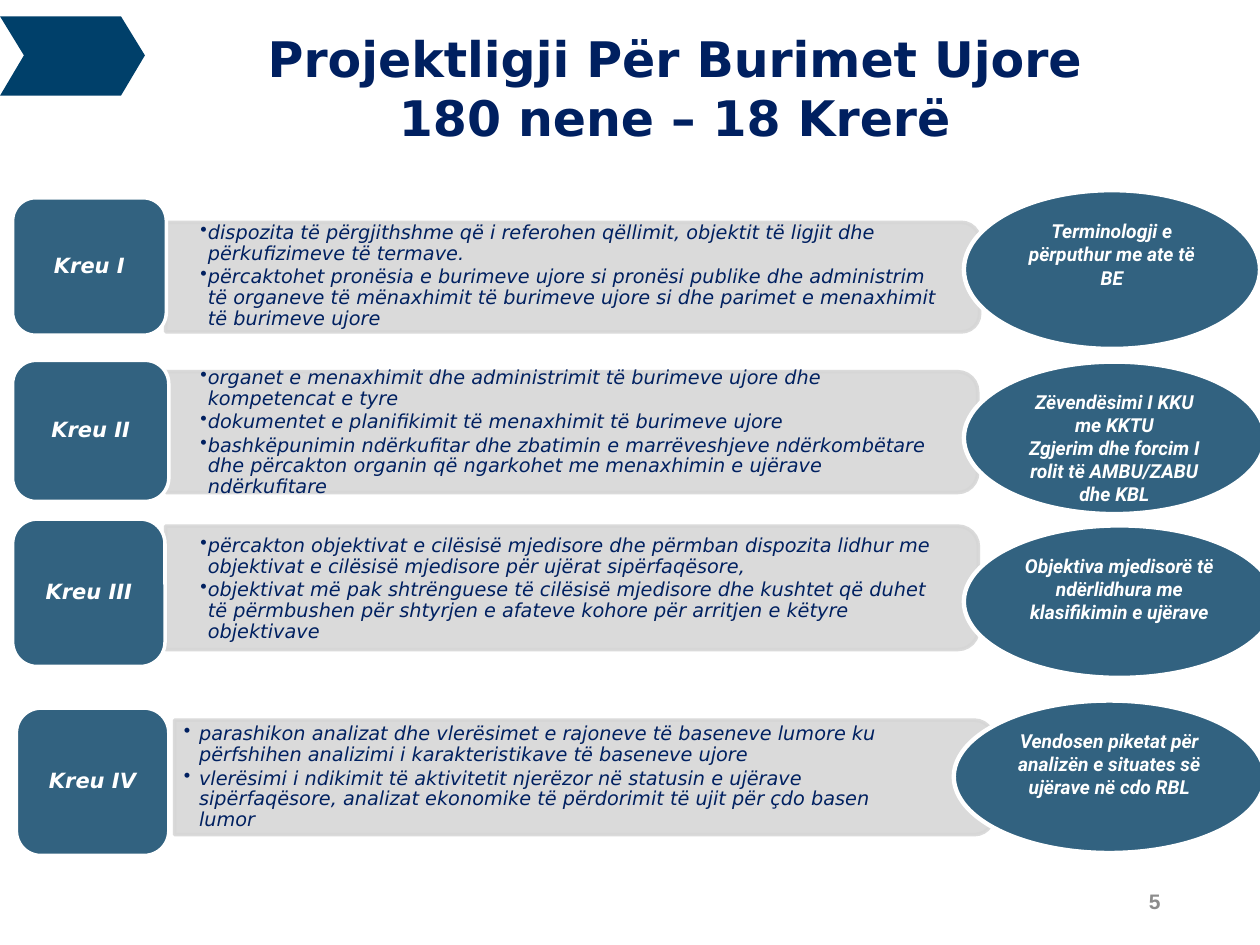
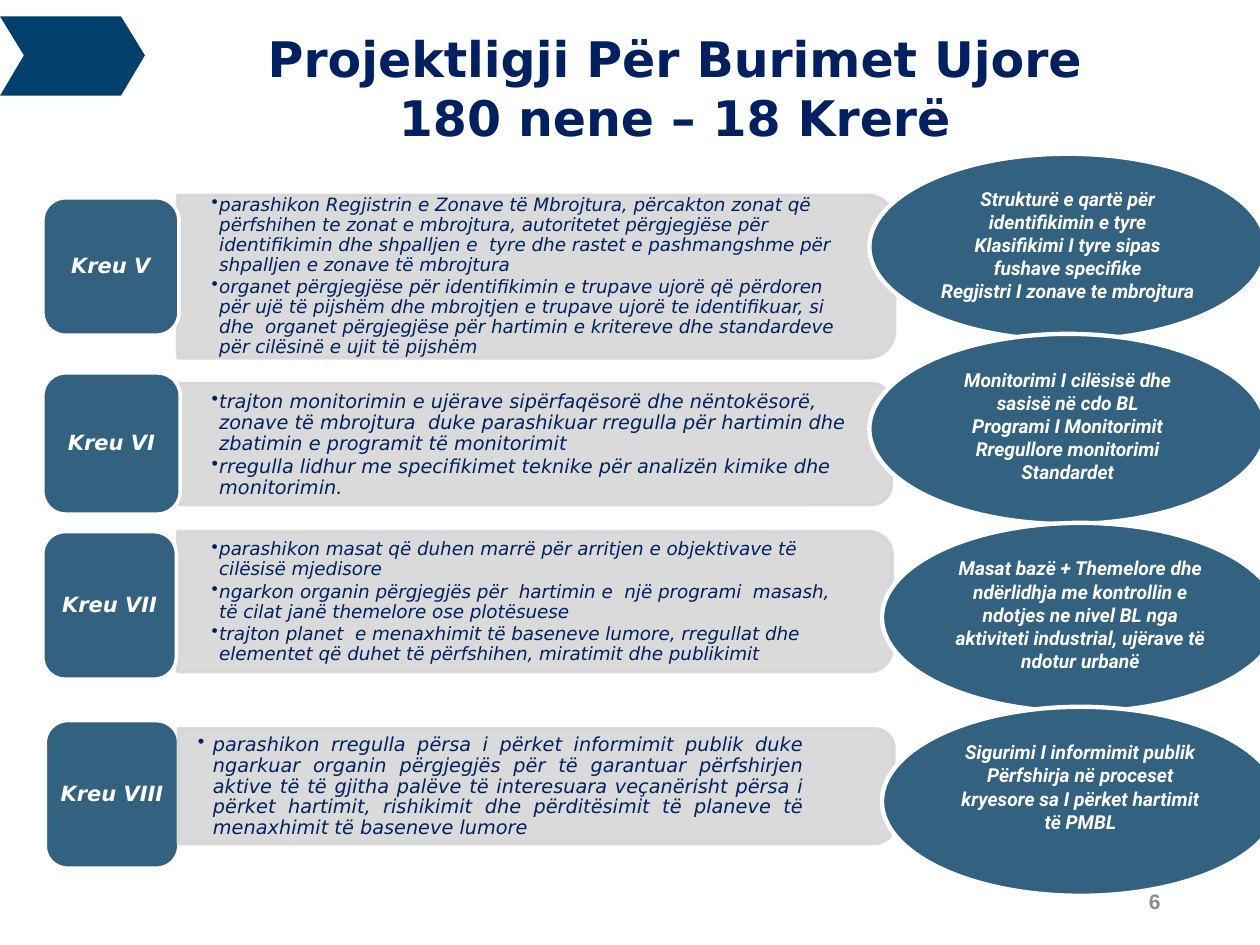
from dataclasses import dataclass

from lxml import etree
from pptx import Presentation, util as u
from pptx.dml.color import RGBColor
from pptx.enum import shapes, text
from pptx.oxml import ns

PX = 9144
Align = text.PP_ALIGN
Anchor = text.MSO_ANCHOR
Preset = shapes.MSO_SHAPE


@dataclass(frozen=True)
class Theme:
    navy: str = "002060"
    arrow: str = "00406A"
    teal: str = "326280"
    bar: str = "D6D6D6"
    white: str = "FFFFFF"
    page_gray: str = "8C8C8C"
    body_font: str = "DejaVu Sans"
    oval_font: str = "Roboto"
    page_font: str = "Arial"
    title_size: float = 28
    label_size: float = 12
    body_size: float = 11
    dense_size: float = 10.5
    bar_opacity: int = 90


@dataclass(frozen=True)
class Chapter:
    label: str
    badge: tuple
    bar: tuple
    note: tuple
    points: list
    oval: tuple
    remarks: list
    size: float = Theme.body_size
    hanging: int = 6
    align: Align = Align.LEFT
    bar_in_front: bool = False


def px(*lengths):
    return [u.Emu(length * PX) for length in lengths]


def write(frame, lines, size, font, color, bold=False, italic=False, align=Align.CENTER,
          anchor=Anchor.TOP, insets=(10, 5, 10, 5), spacing=None, after=None,
          indent=0, bullet=None):
    frame.word_wrap = True
    frame.auto_size = text.MSO_AUTO_SIZE.NONE
    frame.vertical_anchor = anchor
    frame.margin_left, frame.margin_top, frame.margin_right, frame.margin_bottom = px(*insets)
    for index, line in enumerate(lines):
        paragraph = frame.add_paragraph() if index else frame.paragraphs[0]
        paragraph.alignment = align
        paragraph.line_spacing = spacing
        paragraph.space_after = after
        run = paragraph.add_run()
        run.text = line
        run.font.name, run.font.size = font, u.Pt(size)
        run.font.bold, run.font.italic = bold, italic
        run.font.color.rgb = RGBColor.from_string(color)
        properties = paragraph._p.get_or_add_pPr()
        if indent:
            properties.set("marL", str(indent * PX))
        if bullet:
            properties.set("indent", str(-indent * PX))
            etree.SubElement(properties, ns.qn("a:buChar"), char=bullet)


class Deck:
    def __init__(self, theme):
        self.theme = theme
        self.presentation = Presentation()
        self.presentation.slide_width, self.presentation.slide_height = px(1000, 750)
        self.slide = None

    def paint(self, shape, fill, line=None, width=2, opacity=100):
        shape.shadow.inherit = False
        shape.fill.solid()
        shape.fill.fore_color.rgb = RGBColor.from_string(fill)
        if line:
            shape.line.color.rgb = RGBColor.from_string(line)
            shape.line.width = u.Pt(width)
        else:
            shape.line.fill.background()
        if opacity < 100:
            for color in shape._element.spPr.iter(ns.qn("a:srgbClr")):
                etree.SubElement(color, ns.qn("a:alpha"), val=str(opacity * 1000))

    def shape(self, preset, box, fill, line, **look):
        shape = self.slide.shapes.add_shape(preset, *px(*box))
        self.paint(shape, fill, line, **look)
        return shape

    def textbox(self, box, lines, **look):
        write(self.slide.shapes.add_textbox(*px(*box)).text_frame, lines, **look)

    def arrow(self):
        builder = self.slide.shapes.build_freeform(0, 13, scale=PX)
        builder.add_line_segments([(19, 44), (0, 76), (96, 76), (115, 44), (96, 13)], close=True)
        self.paint(builder.convert_to_shape(), self.theme.arrow)

    def bar(self, box):
        left, top, width, height = box
        shift = (width - height) / 2
        upright = (int(left + shift), int(top - shift), height, width)
        shape = self.shape(Preset.ROUND_2_SAME_RECTANGLE, upright, self.theme.bar,
                           self.theme.bar, opacity=self.theme.bar_opacity)
        shape.rotation = 90

    def note(self, chapter):
        self.textbox(chapter.note, chapter.points, size=chapter.size,
                     font=self.theme.body_font, color=self.theme.navy, italic=True,
                     align=chapter.align, anchor=Anchor.MIDDLE, insets=(27, 14, 27, 14),
                     spacing=0.9, after=u.Pt(1.5), indent=chapter.hanging, bullet="•")

    def badge(self, box, label):
        shape = self.shape(Preset.ROUNDED_RECTANGLE, box, self.theme.teal, self.theme.white)
        write(shape.text_frame, [label], size=self.theme.label_size,
              font=self.theme.body_font, color=self.theme.white, bold=True, italic=True,
              anchor=Anchor.MIDDLE, insets=(0, 3, 0, 3), spacing=0.9)

    def oval(self, box, remarks):
        shape = self.shape(Preset.OVAL, box, self.theme.teal, self.theme.white, width=2.5)
        write(shape.text_frame, remarks, size=self.theme.body_size,
              font=self.theme.oval_font, color=self.theme.white, bold=True, italic=True)

    def chapter(self, chapter):
        if not chapter.bar_in_front:
            self.bar(chapter.bar)
        self.badge(chapter.badge, chapter.label)
        if chapter.bar_in_front:
            self.bar(chapter.bar)
        self.note(chapter)
        self.oval(chapter.oval, chapter.remarks)

    def page(self, number, title, chapters):
        self.slide = self.presentation.slides.add_slide(self.presentation.slide_layouts[6])
        self.arrow()
        self.textbox((706, 695, 225, 40), [str(number)], size=self.theme.label_size,
                     font=self.theme.page_font, color=self.theme.page_gray, bold=True,
                     align=Align.RIGHT, anchor=Anchor.MIDDLE)
        self.textbox((67, 13, 906, 118), title, size=self.theme.title_size,
                     font=self.theme.body_font, color=self.theme.navy, bold=True,
                     insets=(10, 10, 10, 10), indent=31)
        for chapter in chapters:
            self.chapter(chapter)


TITLE = ["Projektligji Për Burimet Ujore", "180 nene – 18 Krerë"]

FIRST_CHAPTERS = [
    Chapter(
        "Kreu I", badge=(10, 157, 122, 109), bar=(132, 176, 646, 87), note=(132, 180, 642, 78),
        points=[
            "dispozita të përgjithshme që i referohen qëllimit, objektit të ligjit dhe përkufizimeve të termave.",
            "përcaktohet pronësia e burimeve ujore si pronësi publike dhe administrim të organeve të "
            "mënaxhimit të burimeve ujore si dhe parimet e menaxhimit të burimeve ujore",
        ],
        oval=(765, 151, 235, 126), remarks=["Terminologji e përputhur me ate të BE"]),
    Chapter(
        "Kreu II", badge=(10, 286, 124, 112), bar=(132, 295, 644, 96), note=(132, 300, 640, 87),
        points=[
            "organet e menaxhimit dhe administrimit të burimeve ujore dhe kompetencat e tyre",
            "dokumentet e planifikimit të menaxhimit të burimeve ujore",
            "bashkëpunimin ndërkufitar dhe zbatimin e marrëveshjeve ndërkombëtare dhe përcakton "
            "organin që ngarkohet me menaxhimin e ujërave ndërkufitare",
        ],
        oval=(765, 287, 239, 121),
        remarks=["Zëvendësimi I KKU me KKTU", "Zgjerim dhe forcim I rolit të AMBU/ZABU dhe KBL"]),
    Chapter(
        "Kreu III", badge=(10, 412, 121, 117), bar=(132, 418, 645, 98), note=(132, 423, 640, 89),
        points=[
            "përcakton objektivat e cilësisë mjedisore dhe përmban dispozita lidhur me objektivat e "
            "cilësisë mjedisore për ujërat sipërfaqësore,",
            "objektivat më pak shtrënguese të cilësisë mjedisore dhe kushtet që duhet të përmbushen "
            "për shtyrjen e afateve kohore për arritjen e këtyre objektivave",
        ],
        oval=(765, 417, 247, 121),
        remarks=["Objektiva mjedisorë të ndërlidhura me klasifikimin e ujërave"]),
    Chapter(
        "Kreu IV", badge=(13, 562, 121, 117), bar=(139, 572, 650, 91), note=(119, 576, 646, 82),
        points=[
            "parashikon analizat dhe vlerësimet e rajoneve të baseneve lumore ku përfshihen analizimi "
            "i karakteristikave të baseneve ujore",
            "vlerësimi i ndikimit të aktivitetit njerëzor në statusin e ujërave sipërfaqësore, "
            "analizat ekonomike të përdorimit të ujit për çdo basen lumor",
        ],
        oval=(757, 556, 247, 121),
        remarks=["Vendosen piketat për analizën e situates së ujërave në cdo RBL"],
        hanging=12, bar_in_front=True),
]

SECOND_CHAPTERS = [
    Chapter(
        "Kreu V", badge=(34, 157, 108, 109), bar=(141, 155, 569, 129), note=(141, 161, 562, 117),
        points=[
            "parashikon Regjistrin e Zonave të Mbrojtura, përcakton zonat që përfshihen te zonat e "
            "mbrojtura, autoritetet përgjegjëse për identifikimin dhe shpalljen e  tyre dhe rastet e "
            "pashmangshme për shpalljen e zonave të mbrojtura",
            "organet përgjegjëse për identifikimin e trupave ujorë që përdoren për ujë të pijshëm dhe "
            "mbrojtjen e trupave ujorë te identifikuar, si dhe  organet përgjegjëse për hartimin e "
            "kritereve dhe standardeve për cilësinë e ujit të pijshëm",
        ],
        oval=(690, 122, 315, 148),
        remarks=["Strukturë e qartë për identifikimin e tyre",
                 "Klasifikimi I tyre sipas fushave specifike", "Regjistri I zonave te mbrojtura"],
        size=Theme.dense_size),
    Chapter(
        "Kreu VI", badge=(34, 296, 109, 112), bar=(141, 305, 567, 96), note=(141, 310, 562, 87),
        points=[
            "trajton monitorimin e ujërave sipërfaqësorë dhe nëntokësorë, zonave të mbrojtura  duke "
            "parashikuar rregulla për hartimin dhe zbatimin e programit të monitorimit",
            "rregulla lidhur me specifikimet teknike për analizën kimike dhe monitorimin.",
        ],
        oval=(690, 265, 315, 151),
        remarks=["Monitorimi I cilësisë dhe sasisë në cdo BL", "Programi I Monitorimit",
                 "Rregullore monitorimi", "Standardet"]),
    Chapter(
        "Kreu VII", badge=(34, 422, 106, 117), bar=(141, 422, 567, 111), note=(141, 428, 562, 100),
        points=[
            "parashikon masat që duhen marrë për arritjen e objektivave të cilësisë mjedisore",
            "ngarkon organin përgjegjës për  hartimin e  një programi  masash, të cilat janë "
            "themelore ose plotësuese",
            "trajton planet  e menaxhimit të baseneve lumore, rregullat dhe elementet që duhet të "
            "përfshihen, miratimit dhe publikimit",
        ],
        oval=(700, 415, 315, 150),
        remarks=["Masat bazë + Themelore dhe ndërlidhja me kontrollin e ndotjes ne nivel BL nga "
                 "aktiviteti industrial, ujërave të ndotur urbanë"],
        size=Theme.dense_size),
    Chapter(
        "Kreu VIII", badge=(36, 572, 106, 117), bar=(142, 579, 568, 91), note=(130, 576, 535, 97),
        points=[
            "parashikon rregulla përsa i përket informimit publik duke ngarkuar organin përgjegjës "
            "për të garantuar përfshirjen aktive të të gjitha palëve të interesuara veçanërisht përsa "
            "i përket hartimit, rishikimit dhe përditësimit të planeve të menaxhimit të baseneve lumore",
        ],
        oval=(700, 561, 315, 150),
        remarks=["Sigurimi I informimit publik",
                 "Përfshirja në proceset kryesore sa I përket hartimit të PMBL"],
        hanging=12, align=Align.JUSTIFY, bar_in_front=True),
]


def main():
    deck = Deck(Theme())
    for number, chapters in enumerate([FIRST_CHAPTERS, SECOND_CHAPTERS], start=5):
        deck.page(number, TITLE, chapters)
    deck.presentation.save("out.pptx")


if __name__ == "__main__":
    main()
